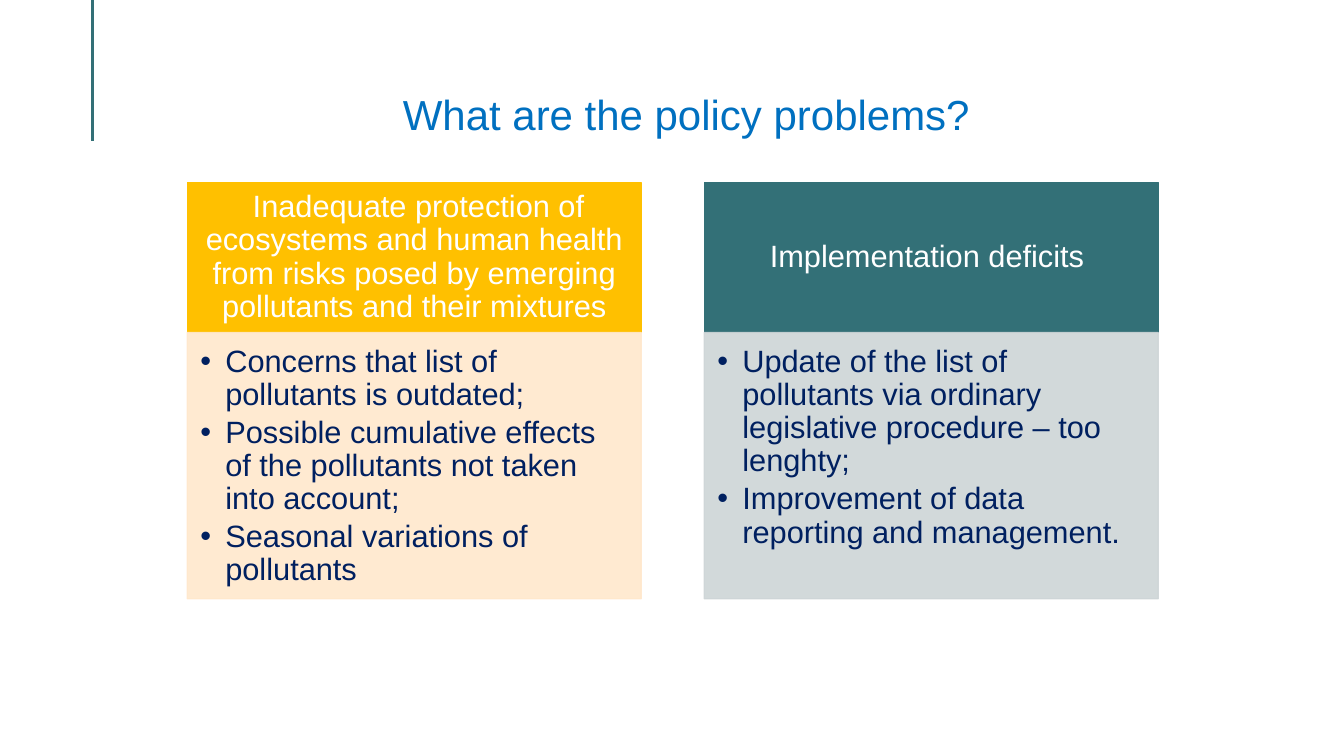
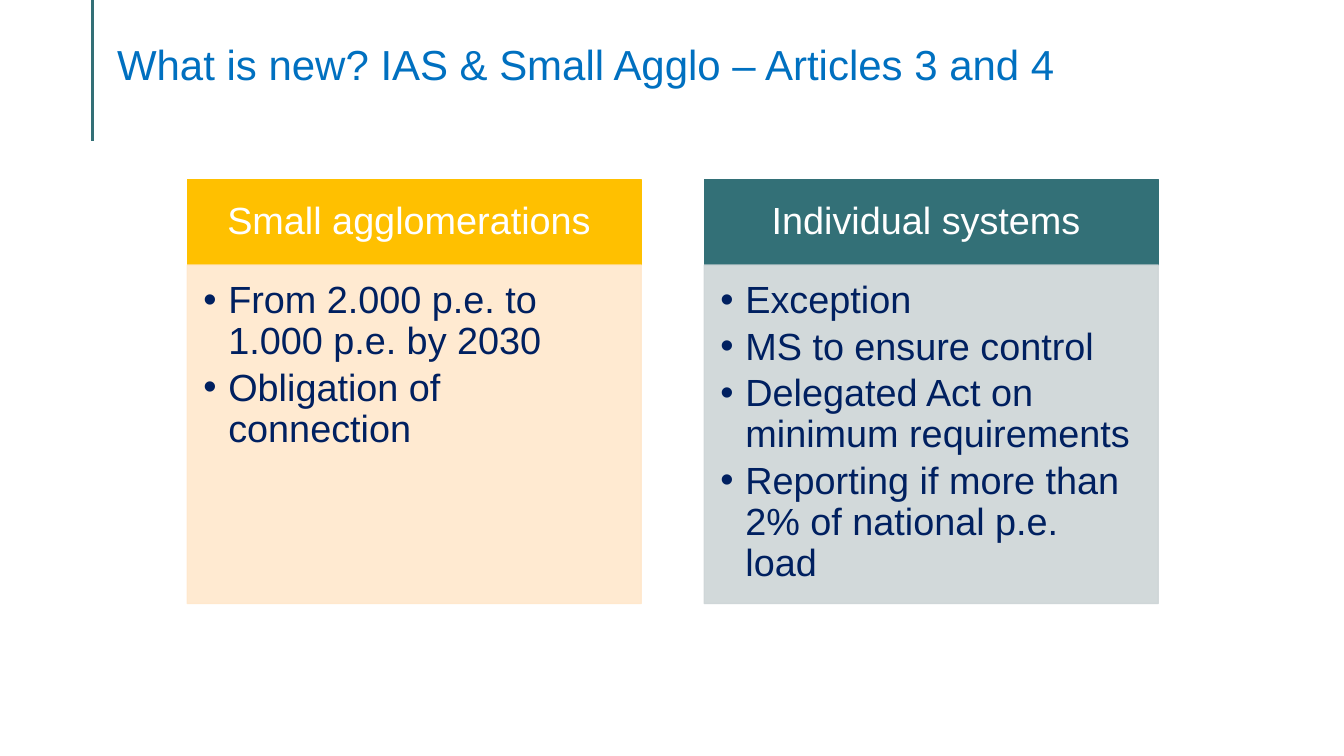
from lxml import etree
from pptx import Presentation
from pptx.dml.color import RGBColor
from pptx.enum.shapes import MSO_CONNECTOR, MSO_SHAPE
from pptx.enum.text import MSO_ANCHOR, MSO_AUTO_SIZE, PP_ALIGN
from pptx.oxml.ns import qn
from pptx.util import Cm, Pt

LINE, RECT = MSO_CONNECTOR.STRAIGHT, MSO_SHAPE.RECTANGLE
TOP, MIDDLE, BOTTOM = MSO_ANCHOR.TOP, MSO_ANCHOR.MIDDLE, MSO_ANCHOR.BOTTOM
LEFT, CENTER = PP_ALIGN.LEFT, PP_ALIGN.CENTER
NO_FIT = MSO_AUTO_SIZE.NONE

FONT = "Arial"
WHITE, NAVY, BLUE, TEAL = "FFFFFF", "002060", "0070C0", "337077"
COLUMN_COLORS = [("FFC000", "FFE8CC"), (TEAL, "CED5D7")]
COLUMN_LEFT, COLUMN_WIDTH, COLUMN_STEP = 4.72, 11.44, 13.03
TITLE_TOP = 1.35


def rgb(value):
    """Turn a hex string into a colour."""
    return RGBColor.from_string(value)


def set_alpha(sp, percent):
    """Make the solid fill and line of a shape partly transparent."""
    for color in sp.fill._xPr.iter(qn("a:srgbClr")):
        etree.SubElement(color, qn("a:alpha"), val=str(percent * 1000))


def add_bullet(p, indent):
    """Give a paragraph a hanging bullet."""
    pPr = p._p.get_or_add_pPr()
    pPr.set("marL", str(indent))
    pPr.set("indent", str(-indent))
    etree.SubElement(pPr, qn("a:buFont"), typeface=FONT)
    etree.SubElement(pPr, qn("a:buChar"), char="•")


def write(tf, lines, size, color, align=LEFT, anchor=TOP, insets=(0, 0, 0, 0),
          bullet=False, after=0):
    """Fill a text frame with formatted paragraphs."""
    tf.word_wrap = True
    tf.auto_size = NO_FIT
    tf.vertical_anchor = anchor
    tf.margin_left, tf.margin_top, tf.margin_right, tf.margin_bottom = map(Cm, insets)
    for i, line in enumerate(lines):
        p = tf.paragraphs[0] if i == 0 else tf.add_paragraph()
        if bullet:
            add_bullet(p, Cm(0.63))
        p.alignment = align
        p.line_spacing = 0.9
        p.space_before = Pt(0)
        p.space_after = Pt(after)
        r = p.add_run()
        r.text = line
        r.font.name = FONT
        r.font.size = Pt(size)
        r.font.color.rgb = rgb(color)


class Deck:
    """Hold the presentation, its style and the current slide."""

    def __init__(self):
        """Start a widescreen presentation."""
        self.prs = Presentation()
        self.prs.slide_width, self.prs.slide_height = Cm(33.87), Cm(19.05)
        self.s = None

    def slide(self, title, align=LEFT, top=TITLE_TOP):
        """Add a slide with its title and accent line."""
        self.s = self.prs.slides.add_slide(self.prs.slide_layouts[5])
        self.accent()
        sp = self.s.shapes.title
        sp.left, sp.top, sp.width, sp.height = Cm(2.7), Cm(top), Cm(29.2), Cm(2.18)
        write(sp.text_frame, [title], 30, BLUE, align, BOTTOM, (0.25, 0.13, 0.25, 0))

    def accent(self):
        """Draw the vertical line at the top left."""
        cxn = self.s.shapes.add_connector(LINE, Cm(2.34), Cm(0), Cm(2.34), Cm(3.56))
        cxn.line.color.rgb = rgb(TEAL)
        cxn.line.width = Pt(2.25)
        etree.SubElement(cxn._element.spPr, qn("a:effectLst"))

    def box(self, left, top, height, color):
        """Draw a column-wide rectangle and return it."""
        sp = self.s.shapes.add_shape(RECT, Cm(left), Cm(top), Cm(COLUMN_WIDTH), Cm(height))
        sp.shadow.inherit = False
        sp.fill.solid()
        sp.fill.fore_color.rgb = rgb(color)
        sp.line.color.rgb = rgb(color)
        sp.line.width = Pt(1)
        return sp

    def columns(self, columns, top, head_height, body_height, size):
        """Draw headed bullet columns with insets in step with the text size."""
        side, narrow = 0.0195 * size, 0.015 * size
        head_insets = (side, 0.0113 * size) * 2
        body_insets = (narrow, narrow, side, 0.0225 * size)
        for i, (heading, bullets) in enumerate(columns):
            left = COLUMN_LEFT + i * COLUMN_STEP
            head_color, body_color = COLUMN_COLORS[i]
            sp = self.box(left, top, head_height, head_color)
            write(sp.text_frame, [heading], size, WHITE, CENTER, MIDDLE, head_insets)
            sp = self.box(left, top + head_height, body_height, body_color)
            set_alpha(sp, 90)
            write(sp.text_frame, bullets, size, NAVY, insets=body_insets,
                  bullet=True, after=0.15 * size)


def main():
    """Build and save the slides."""
    deck = Deck()
    deck.slide("What are the policy problems?", CENTER)
    deck.columns([
        (" Inadequate protection of ecosystems and human health from risks posed "
         "by emerging pollutants and their mixtures",
         ["Concerns that list of pollutants is outdated;",
          "Possible cumulative effects of the pollutants not taken into account;",
          "Seasonal variations of pollutants"]),
        ("Implementation deficits ",
         ["Update of the list of pollutants via ordinary legislative procedure "
          "– too lenghty;",
          "Improvement of data reporting and management."]),
    ], top=4.6, head_height=3.78, body_height=6.71, size=22)

    deck.slide("What is new? IAS & Small Agglo – Articles 3 and 4", top=TITLE_TOP - 1.28)
    deck.columns([
        ("Small agglomerations ",
         ["From 2.000 p.e. to 1.000 p.e. by 2030", "Obligation of connection"]),
        ("Individual systems ",
         ["Exception", "MS to ensure control",
          "Delegated Act on minimum requirements",
          "Reporting if more than 2% of national p.e. load"]),
    ], top=4.52, head_height=2.16, body_height=8.53, size=27)
    deck.prs.save("out.pptx")


if __name__ == "__main__":
    main()
